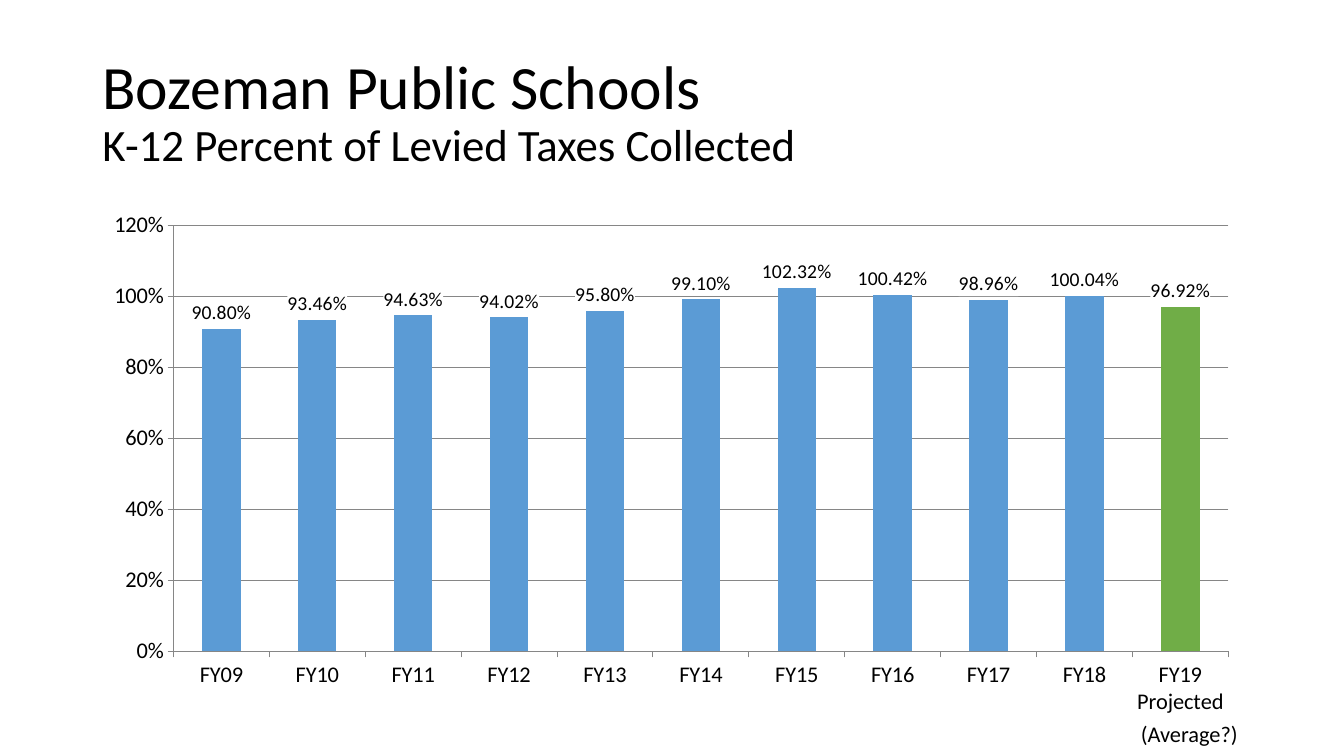
from dataclasses import dataclass

from lxml import etree
from pptx import Presentation
from pptx.chart.chart import Chart
from pptx.chart.data import CategoryChartData
from pptx.dml.color import RGBColor
from pptx.enum.chart import XL_CHART_TYPE, XL_LABEL_POSITION, XL_TICK_MARK
from pptx.enum.text import MSO_ANCHOR, MSO_AUTO_SIZE, PP_ALIGN
from pptx.oxml import parse_xml
from pptx.oxml.ns import nsdecls, qn
from pptx.slide import Slide
from pptx.util import Pt

COLUMNS = XL_CHART_TYPE.COLUMN_CLUSTERED
OUTSIDE_END = XL_LABEL_POSITION.OUTSIDE_END
TICK_OUT, TICK_NONE = XL_TICK_MARK.OUTSIDE, XL_TICK_MARK.NONE
MIDDLE, LEFT = MSO_ANCHOR.MIDDLE, PP_ALIGN.LEFT
FIT_SHAPE, NO_FIT = MSO_AUTO_SIZE.SHAPE_TO_FIT_TEXT, MSO_AUTO_SIZE.NONE
TITLE_ONLY = 5


@dataclass(frozen=True)
class Theme:
    font: str = "Calibri"
    ink: RGBColor = RGBColor(0x00, 0x00, 0x00)
    grid: RGBColor = RGBColor(0x86, 0x86, 0x86)
    actual: RGBColor = RGBColor(0x5B, 0x9B, 0xD5)
    projected: RGBColor = RGBColor(0x70, 0xAD, 0x47)
    label_back: str = "FFFFFF"
    title: int = 44
    subtitle: int = 32
    axis: int = 16
    label: int = 14
    chart: int = 10


@dataclass(frozen=True)
class FiscalYear:
    name: str
    collected: float
    projected: bool = False


THEME = Theme()
YEARS = [
    FiscalYear("FY09", 0.908),
    FiscalYear("FY10", 0.9346),
    FiscalYear("FY11", 0.9463),
    FiscalYear("FY12", 0.9402),
    FiscalYear("FY13", 0.958),
    FiscalYear("FY14", 0.991),
    FiscalYear("FY15", 1.0232),
    FiscalYear("FY16", 1.0042),
    FiscalYear("FY17", 0.9896),
    FiscalYear("FY18", 1.0004),
    FiscalYear("FY19 Projected", 0.9692, projected=True),
]


def style_font(font, size: int) -> None:
    font.name = THEME.font
    font.size = Pt(size)
    font.color.rgb = THEME.ink


def add_run(paragraph, text: str, size: int) -> None:
    run = paragraph.add_run()
    run.text = text
    style_font(run.font, size)


def add_title(slide: Slide) -> None:
    title = slide.shapes.title
    title.left, title.top, title.width, title.height = Pt(66), Pt(28.75), Pt(828), Pt(104.4)
    frame = title.text_frame
    frame.vertical_anchor = MIDDLE
    frame.auto_size = NO_FIT
    heading = frame.paragraphs[0]
    heading.alignment = LEFT
    heading.line_spacing = 0.9
    add_run(heading, "Bozeman Public Schools", THEME.title)
    heading.add_line_break()
    add_run(heading, "K-12 Percent of Levied Taxes Collected", THEME.subtitle)


def format_axes(chart: Chart) -> None:
    for axis in (chart.category_axis, chart.value_axis):
        axis.major_tick_mark = TICK_OUT
        axis.minor_tick_mark = TICK_NONE
        axis.format.line.color.rgb = THEME.grid
        axis.format.line.width = Pt(0.75)
        style_font(axis.tick_labels.font, THEME.axis)
    chart.category_axis.has_major_gridlines = False
    percent = chart.value_axis
    percent.minimum_scale, percent.maximum_scale, percent.major_unit = 0, 1.2, 0.2
    percent.tick_labels.number_format = "0%"
    percent.tick_labels.number_format_is_linked = False
    percent.has_major_gridlines = True
    percent.major_gridlines.format.line.color.rgb = THEME.grid
    percent.major_gridlines.format.line.width = Pt(0.75)


def format_bars(chart: Chart) -> None:
    plot = chart.plots[0]
    plot.gap_width = 150
    plot.vary_by_categories = False
    bars = plot.series[0]
    bars.invert_if_negative = False
    bars.format.fill.solid()
    bars.format.fill.fore_color.rgb = THEME.actual
    for index, year in enumerate(YEARS):
        if year.projected:
            fill = bars.points[index].format.fill
            fill.solid()
            fill.fore_color.rgb = THEME.projected

    labels = bars.data_labels
    labels.show_value = True
    labels.number_format = "0.00%"
    labels.number_format_is_linked = False
    labels.position = OUTSIDE_END
    style_font(labels.font, THEME.label)
    # A solid backing keeps the gridlines from crossing the labels.
    backing = parse_xml(
        f'<c:spPr {nsdecls("c", "a")}><a:solidFill>'
        f'<a:srgbClr val="{THEME.label_back}"/></a:solidFill></c:spPr>'
    )
    bars.data_labels.font  # the text properties must follow the backing
    bars._element.find(qn("c:dLbls")).find(qn("c:txPr")).addprevious(backing)


def place_plot(chart: Chart, x: float, y: float, w: float, h: float) -> None:
    """Fix the inner plot area as fractions of the chart frame."""
    area = chart._chartSpace.chart.plotArea
    for old in area.findall(qn("c:layout")):
        area.remove(old)
    layout = etree.Element(qn("c:layout"))
    manual = etree.SubElement(layout, qn("c:manualLayout"))
    settings = {"layoutTarget": "inner", "xMode": "edge", "yMode": "edge",
                "x": x, "y": y, "w": w, "h": h}
    for name, value in settings.items():
        etree.SubElement(manual, qn(f"c:{name}")).set("val", str(value))
    area.insert(0, layout)


def add_collection_chart(slide: Slide) -> None:
    data = CategoryChartData(number_format="0.00%")
    data.categories = [year.name for year in YEARS]
    data.add_series("Series 1", [year.collected for year in YEARS])
    frame = slide.shapes.add_chart(COLUMNS, Pt(66), Pt(144), Pt(828), Pt(375.84), data)
    chart = frame.chart
    chart.has_legend = False
    chart.has_title = False
    style_font(chart.font, THEME.chart)
    format_axes(chart)
    format_bars(chart)
    place_plot(chart, 0.07, 0.045, 0.91, 0.81)


def add_average_note(slide: Slide) -> None:
    note = slide.shapes.add_textbox(Pt(807.84), Pt(511.2), Pt(84.96), Pt(26.64))
    frame = note.text_frame
    frame.word_wrap = False
    frame.auto_size = FIT_SHAPE
    add_run(frame.paragraphs[0], "(Average?)", THEME.axis)


def main() -> None:
    deck = Presentation()
    deck.slide_width, deck.slide_height = Pt(960), Pt(540)
    slide = deck.slides.add_slide(deck.slide_layouts[TITLE_ONLY])
    add_title(slide)
    add_collection_chart(slide)
    add_average_note(slide)
    deck.save("out.pptx")


if __name__ == "__main__":
    main()
